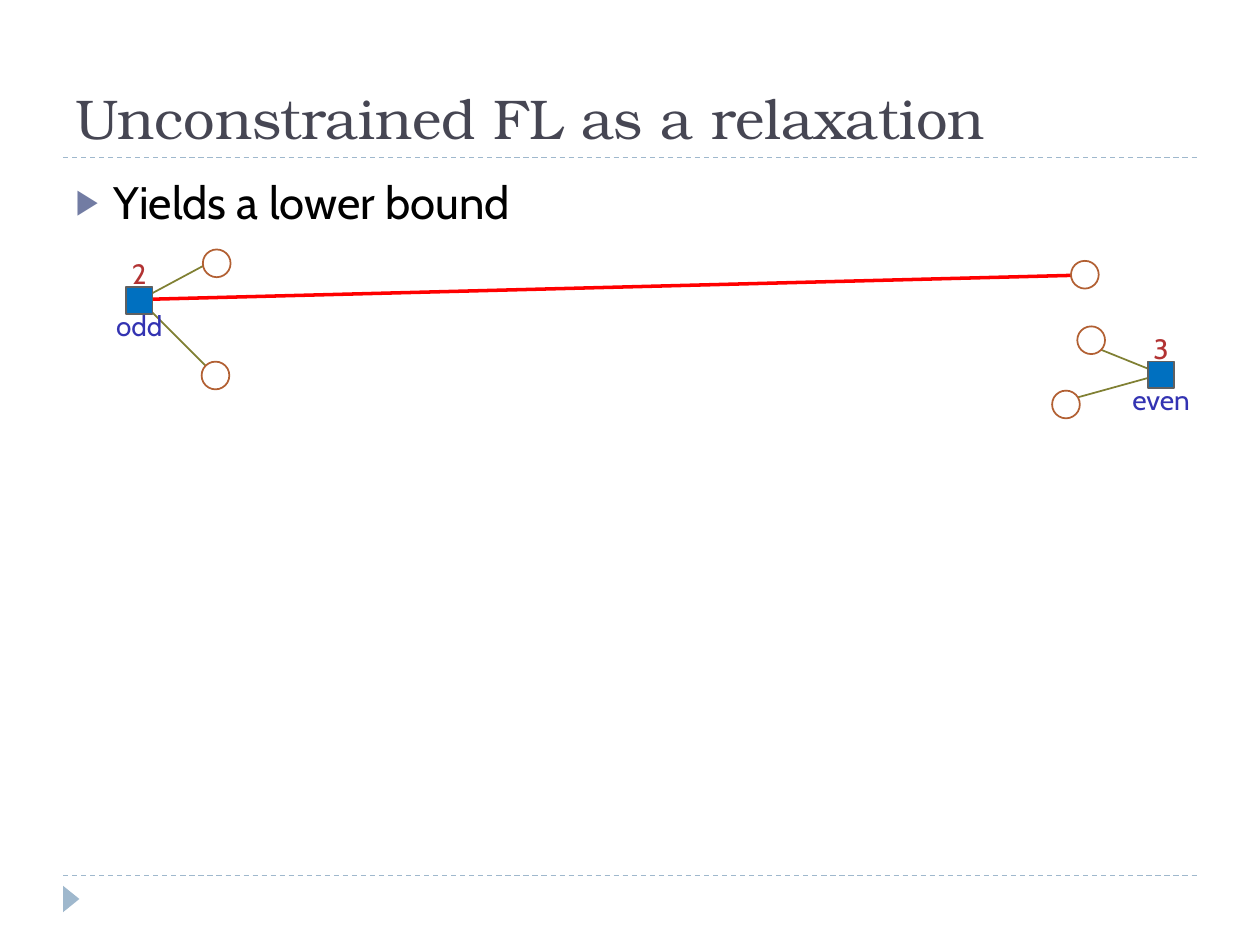
from lxml import etree
from pptx import Presentation
from pptx import util as u
from pptx.dml.color import RGBColor
from pptx.enum import dml, shapes, text
from pptx.oxml import ns

COLOURS = {
    "title": "464653", "body": "000000", "bullet": "727CA3", "rule": "9FB8CD",
    "spoke": "808033", "detour": "FF0000", "customer": "B26033", "paper": "FFFFFF",
    "facility": "0070C0", "edge": "606060", "count": "B23333", "parity": "3333B2",
}
SQUARE, CIRCLE = 0.21, 0.22

FACILITIES = [
    {"corner": (9.11, 2.87), "aim": (9.22, 2.97), "count": "3", "parity": "even",
     "customers": [((8.35, 3.1), (8.35, 3.21)), ((8.55, 2.59), (8.55, 2.7))]},
    {"corner": (1, 2.28), "aim": (1.11, 2.38), "count": "2", "parity": "odd",
     "customers": [((1.61, 1.98), (1.8, 2.01)), ((1.6, 2.87), (1.79, 3.06))]},
]


class SlideBuilder:
    def __init__(self, slide):
        self.slide = slide

    def colour(self, name):
        return RGBColor.from_string(COLOURS[name])

    def place(self, item, left, top, width, height):
        values = {"left": left, "top": top, "width": width, "height": height}
        for name, value in values.items():
            setattr(item, name, u.Inches(value))

    def add_words(self, box, words, colour, size, font="Cabin", align=text.PP_ALIGN.LEFT):
        para = box.text_frame.paragraphs[0]
        para.alignment = align
        span = para.add_run()
        span.text = words
        for name, value in {"name": font, "size": u.Pt(size)}.items():
            setattr(span.font, name, value)
        span.font.color.rgb = self.colour(colour)
        return para

    def title(self, words):
        box = self.slide.shapes.title
        self.place(box, 0.5, 0.17, 9, 1.08)
        box.text_frame.vertical_anchor = text.MSO_ANCHOR.BOTTOM
        self.add_words(box, words, "title", 32, "TeX Gyre Bonum")

    def body(self, words):
        box = self.slide.placeholders[1]
        self.place(box, 0.5, 1.33, 9, 5.4)
        para = self.add_words(box, words, "body", 26)
        para.space_before = u.Pt(6)
        self.bullet(para, "▶")

    def bullet(self, para, mark):
        settings = para._p.get_or_add_pPr()
        settings.set("marL", str(u.Inches(0.3)))
        settings.set("indent", str(u.Inches(-0.3)))
        tint = etree.SubElement(settings, ns.qn("a:buClr"))
        etree.SubElement(tint, ns.qn("a:srgbClr"), val=COLOURS["bullet"])
        etree.SubElement(settings, ns.qn("a:buSzPct"), val="76000")
        etree.SubElement(settings, ns.qn("a:buChar"), char=mark)

    def line(self, start, end, colour, width=1, dash=None):
        points = [u.Inches(value) for value in (*start, *end)]
        link = self.slide.shapes.add_connector(shapes.MSO_CONNECTOR.STRAIGHT, *points)
        link.line.color.rgb = self.colour(colour)
        link.line.width = u.Pt(width)
        if dash:
            link.line.dash_style = dash
        etree.SubElement(link._element.spPr, ns.qn("a:effectLst"))

    def shape(self, kind, corner, size, fill, outline=None):
        lengths = [u.Inches(value) for value in (*corner, *size)]
        item = self.slide.shapes.add_shape(kind, *lengths)
        item.shadow.inherit = False
        item.fill.solid()
        item.fill.fore_color.rgb = self.colour(fill)
        if outline:
            item.line.color.rgb = self.colour(outline)
            item.line.width = u.Pt(1)
        else:
            item.line.fill.background()
        return item

    def label(self, words, centre, top, width, colour):
        lengths = [u.Inches(value) for value in (centre - width / 2, top, width, 0.4)]
        box = self.slide.shapes.add_textbox(*lengths)
        box.text_frame.word_wrap = False
        self.add_words(box, words, colour, 16, align=text.PP_ALIGN.CENTER)

    def customer(self, corner):
        self.shape(shapes.MSO_SHAPE.OVAL, corner, (CIRCLE, CIRCLE), "paper", "customer")

    def facility(self, corner, aim, count, parity, customers):
        for _, end in customers:
            self.line(aim, end, "spoke")
        for place, _ in customers:
            self.customer(place)
        left, top = corner
        centre = left + SQUARE / 2
        self.label(count, centre, top - 0.29, 0.56, "count")
        self.shape(shapes.MSO_SHAPE.RECTANGLE, corner, (SQUARE, SQUARE), "facility", "edge")
        self.label(parity, centre, top + 0.12, 0.76, "parity")


def main():
    deck = Presentation()
    deck.slide_width, deck.slide_height = u.Inches(10), u.Inches(7.5)
    page = SlideBuilder(deck.slides.add_slide(deck.slide_layouts[1]))
    for height in (6.95, 1.25):
        page.line((0.5, height), (9.5, height), "rule", 0.75, dml.MSO_LINE.DASH)
    marker = page.shape(shapes.MSO_SHAPE.ISOSCELES_TRIANGLE, (0.46, 7.07), (0.21, 0.13), "rule")
    marker.rotation = 90
    page.title("Unconstrained FL as a relaxation")
    page.body("Yields a lower bound")
    page.line((8.72, 2.18), (1, 2.38), "detour", 2)
    page.customer((8.5, 2.07))
    for facility in FACILITIES:
        page.facility(**facility)
    deck.save("out.pptx")


if __name__ == "__main__":
    main()
